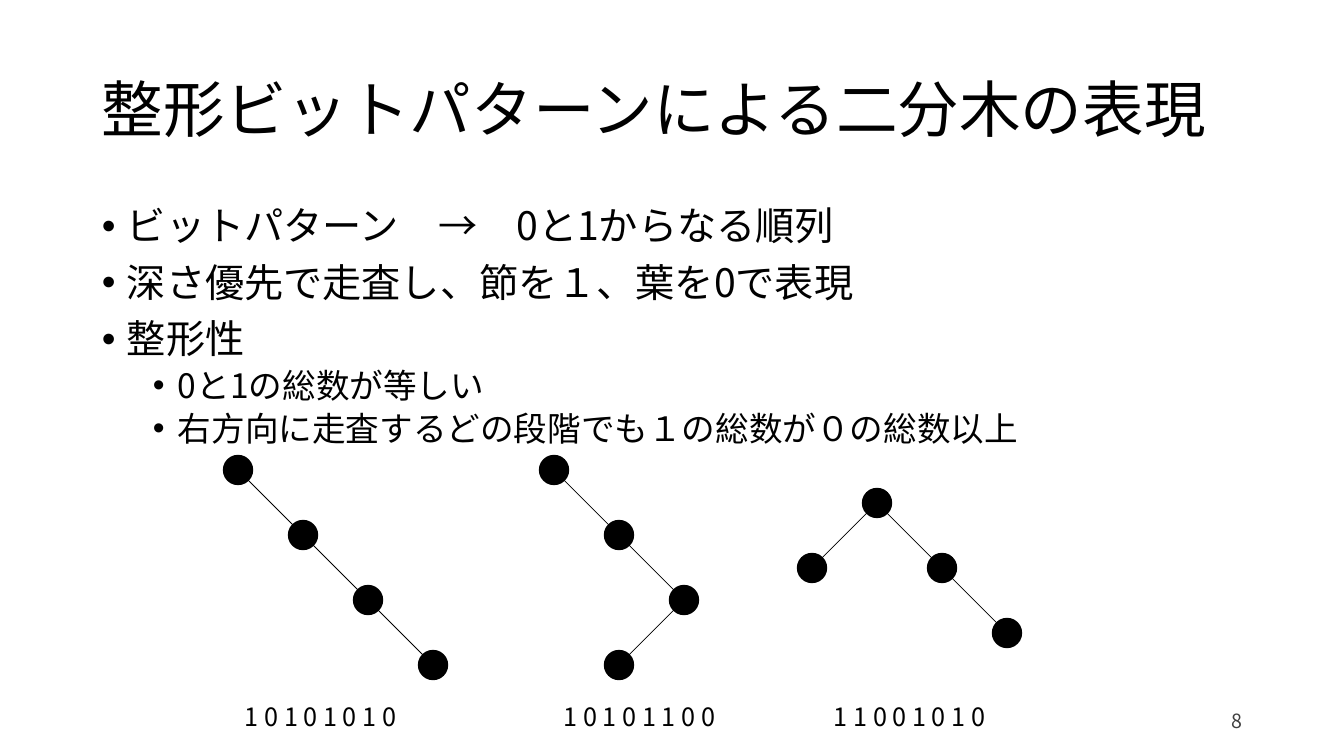
from lxml import etree
from pptx import Presentation
from pptx import util as u
from pptx.dml.color import RGBColor
from pptx.enum import shapes, text
from pptx.oxml import ns

PX = 12192000 / 1344
FONT = "Noto Sans CJK JP"
BLACK = "000000"
STEP = 65   # distance between tree levels
DOT = 29    # node diameter
GAP = 10    # edge end to node centre, along each axis

ITEMS = [
    (0, "ビットパターン　→　0と1からなる順列"),
    (0, "深さ優先で走査し、節を１、葉を0で表現"),
    (0, "整形性"),
    (1, "0と1の総数が等しい"),
    (1, "右方向に走査するどの段階でも１の総数が０の総数以上"),
]
# Font size, left margin and space before, by level
LEVELS = [(28, 25, 10), (24, 76, 5)]

# Root centre, nodes as (column, level), parent of each later node,
# bit pattern and the left edge of its label
TREES = [
    ((238, 470), [(0, 0), (1, 1), (2, 2), (3, 3)], [0, 1, 2],
     "1 0 1 0 1 0 1 0", 192),
    ((554, 470), [(0, 0), (1, 1), (2, 2), (1, 3)], [0, 1, 2],
     "1 0 1 0 1 1 0 0", 511),
    ((877, 503), [(0, 0), (-1, 1), (1, 1), (2, 2)], [0, 0, 2],
     "1 1 0 0 1 0 1 0", 781),
]


def px(n):
    return u.Emu(round(n * PX))


def rgb(code):
    return RGBColor.from_string(code)


def frame(slide, x, y, w, h, anchor=text.MSO_ANCHOR.TOP):
    box = slide.shapes.add_textbox(px(x), px(y), px(w), px(h))
    body = box.text_frame
    body.word_wrap = True
    body.vertical_anchor = anchor
    return body


def write(para, words, size=18, color=BLACK, align=text.PP_ALIGN.LEFT,
          space=1.0, before=0):
    para.alignment = align
    para.line_spacing = space
    para.space_before = u.Pt(before)
    run = para.add_run()
    run.text = words
    font = run.font
    font.name = FONT
    font.size = u.Pt(size)
    font.color.rgb = rgb(color)
    east = etree.SubElement(font._element, ns.qn("a:ea"))
    east.set("typeface", FONT)


def bullet(para, left):
    props = para._p.get_or_add_pPr()
    props.set("marL", str(px(left)))
    props.set("indent", str(px(-25)))
    face = etree.SubElement(props, ns.qn("a:buFont"))
    face.set("typeface", "Arial")
    mark = etree.SubElement(props, ns.qn("a:buChar"))
    mark.set("char", "•")


def outline(slide):
    body = frame(slide, 92, 202, 1159, 480)
    for i, (level, words) in enumerate(ITEMS):
        para = body.add_paragraph() if i else body.paragraphs[0]
        size, left, before = LEVELS[level]
        para.level = level
        write(para, words, size=size, space=0.9, before=before)
        bullet(para, left)


def node(group, x, y):
    dot = group.shapes.add_shape(
        shapes.MSO_SHAPE.OVAL, px(x - DOT / 2), px(y - DOT / 2),
        px(DOT), px(DOT))
    dot.shadow.inherit = False
    dot.fill.solid()
    dot.fill.fore_color.rgb = rgb(BLACK)
    dot.line.color.rgb = rgb(BLACK)
    dot.line.width = u.Pt(1)


def edge(group, start, end):
    (x1, y1), (x2, y2) = start, end
    side = GAP if x2 > x1 else -GAP
    line = group.shapes.add_connector(
        shapes.MSO_CONNECTOR.STRAIGHT, px(x1 + side), px(y1 + GAP),
        px(x2 - side), px(y2 - GAP))
    line.line.color.rgb = rgb(BLACK)
    line.line.width = u.Pt(0.5)
    etree.SubElement(line._element.spPr, ns.qn("a:effectLst"))


def tree(slide, root, cells, parents):
    group = slide.shapes.add_group_shape()
    spots = [(root[0] + col * STEP, root[1] + row * STEP)
             for col, row in cells]
    for parent, spot in zip(parents, spots[1:]):
        edge(group, spots[parent], spot)
    for spot in spots:
        node(group, *spot)


def main():
    deck = Presentation()
    deck.slide_width, deck.slide_height = px(1344), px(756)
    slide = deck.slides.add_slide(deck.slide_layouts[6])

    # Title and bullet list
    title = frame(slide, 92, 40, 1159, 146, text.MSO_ANCHOR.MIDDLE)
    write(title.paragraphs[0], "整形ビットパターンによる二分木の表現",
          size=44, space=0.9)
    outline(slide)

    # Trees with their bit patterns
    for root, cells, parents, bits, left in TREES:
        tree(slide, root, cells, parents)
        label = frame(slide, left, 696, 257, 40)
        write(label.paragraphs[0], bits, align=text.PP_ALIGN.CENTER)

    # Slide number
    number = frame(slide, 950, 701, 302, 40, text.MSO_ANCHOR.MIDDLE)
    write(number.paragraphs[0], "8", size=14, color="404040",
          align=text.PP_ALIGN.RIGHT)

    deck.save("out.pptx")


if __name__ == "__main__":
    main()
